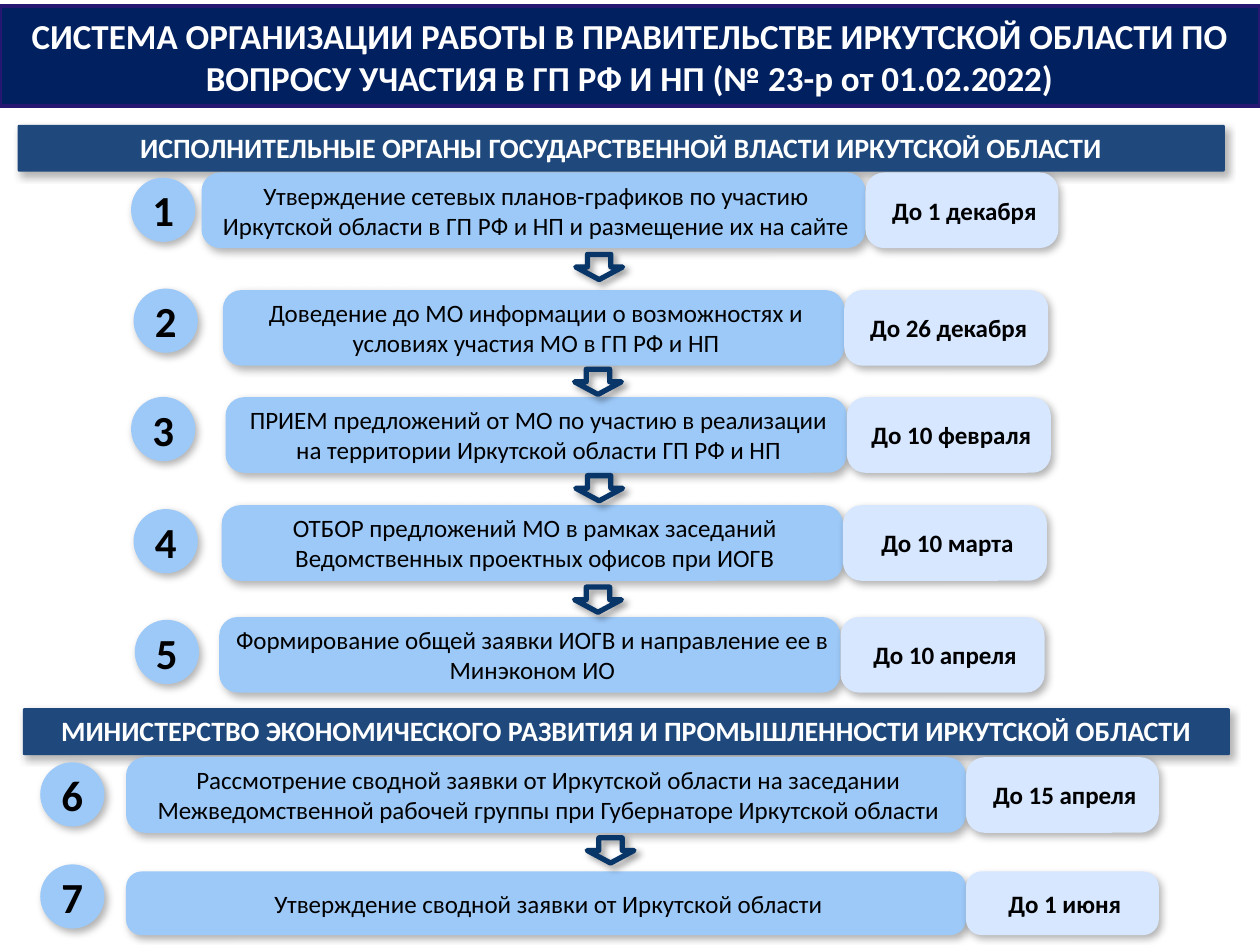
from pptx import Presentation
from pptx.dml.color import RGBColor
from pptx.enum.shapes import MSO_SHAPE as Preset
from pptx.enum.text import MSO_ANCHOR as Anchor, MSO_AUTO_SIZE as AutoSize, PP_ALIGN as Align
from pptx.oxml import parse_xml
from pptx.oxml.ns import nsdecls
from pptx.util import Pt

NAVY, BLUE, SKY, PALE = "002060", "1F497D", "9DC9F8", "D6E7FF"
WHITE, BLACK = "FFFFFF", "000000"


def write(box, text, size=14.3, bold=False, color=BLACK, anchor=Anchor.MIDDLE,
          margins=(0, 0, 0, 0)):
    frame = box.text_frame
    frame.word_wrap = True
    frame.auto_size = AutoSize.NONE
    frame.vertical_anchor = anchor
    frame.margin_left, frame.margin_top, frame.margin_right, frame.margin_bottom = map(Pt, margins)
    para = frame.paragraphs[0]
    para.alignment = Align.CENTER
    span = para.add_run()
    span.text = text
    span.font.name = "Calibri"
    span.font.size = Pt(size)
    span.font.bold = bold
    span.font.color.rgb = RGBColor.from_string(color)


def add_box(preset, left, top, width, height, fill=None, line=None, corner=None,
            blur=4.5, distance=2.6, angle=53, alpha=30):
    box = page.shapes.add_shape(preset, Pt(left), Pt(top), Pt(width), Pt(height))
    if corner is not None:
        box.adjustments[0] = corner
    if fill:
        box.fill.solid()
        box.fill.fore_color.rgb = RGBColor.from_string(fill)
    else:
        box.fill.background()
    if line:
        box.line.color.rgb = RGBColor.from_string(line)
        box.line.width = Pt(3)
    else:
        box.line.fill.background()
    # Soft outer shadow
    box._element.spPr.append(parse_xml(
        f'<a:effectLst {nsdecls("a")}><a:outerShdw blurRad="{Pt(blur)}" dist="{Pt(distance)}" '
        f'dir="{angle * 60000}" algn="tl" rotWithShape="0"><a:srgbClr val="000000">'
        f'<a:alpha val="{alpha * 1000}"/></a:srgbClr></a:outerShdw></a:effectLst>'))
    return box


deck = Presentation()
deck.slide_width, deck.slide_height = Pt(720), Pt(540)
page = deck.slides.add_slide(deck.slide_layouts[5])

# Title
title = page.shapes.title
title.left, title.top, title.width, title.height = Pt(0), Pt(3.6), Pt(720), Pt(56.9)
title.fill.solid()
title.fill.fore_color.rgb = RGBColor.from_string(NAVY)
title.line.color.rgb = RGBColor.from_string("261773")
title.line.width = Pt(2.47)
write(title, "СИСТЕМА ОРГАНИЗАЦИИ РАБОТЫ В ПРАВИТЕЛЬСТВЕ ИРКУТСКОЙ ОБЛАСТИ ПО "
      "ВОПРОСУ УЧАСТИЯ В ГП РФ И НП (№ 23-р от 01.02.2022)", size=20, bold=True, color=WHITE)

# Section bars
for left, top, text in [
    (10.1, 71.3, "ИСПОЛНИТЕЛЬНЫЕ ОРГАНЫ ГОСУДАРСТВЕННОЙ ВЛАСТИ ИРКУТСКОЙ ОБЛАСТИ"),
    (13, 404.7, "МИНИСТЕРСТВО ЭКОНОМИЧЕСКОГО РАЗВИТИЯ И ПРОМЫШЛЕННОСТИ ИРКУТСКОЙ ОБЛАСТИ"),
]:
    bar = add_box(Preset.ROUNDED_RECTANGLE, left, top, 689.8, 26.8, BLUE, corner=0.032)
    write(bar, text, size=16, bold=True, color=WHITE, anchor=Anchor.TOP, margins=(0, 2.9, 0, 2.9))

# Steps: circle left and top, step left, top, width and height, date width, texts
steps = [
    (74.9, 101.5, 115.2, 98.6, 379.4, 43.2, 110.2, "До 1 декабря",
     "Утверждение сетевых планов-графиков по участию Иркутской области в ГП РФ и НП "
     "и размещение их на сайте"),
    (76.3, 164.9, 127.4, 165.8, 355, 43.2, 116.6, "До 26 декабря",
     "Доведение до МО информации о возможностях и условиях участия МО в ГП РФ и НП"),
    (74.9, 226.8, 128.9, 227, 355, 43.2, 116.6, "До 10 февраля",
     "ПРИЕМ предложений от МО по участию в реализации на территории Иркутской области "
     "ГП РФ и НП"),
    (76.3, 290.9, 126.7, 288.7, 355, 43.2, 116.6, "До 10 марта",
     "ОТБОР предложений МО в рамках заседаний Ведомственных проектных офисов при ИОГВ"),
    (77, 354.2, 125.3, 352.6, 355, 43.2, 116.6, "До 10 апреля",
     "Формирование общей заявки ИОГВ и направление ее в Минэконом ИО"),
    (23, 435.6, 72, 432.7, 480, 43.2, 110.2, "До 15 апреля",
     "Рассмотрение сводной заявки от Иркутской области на заседании Межведомственной "
     "рабочей группы при Губернаторе Иркутской области"),
    (23, 493.9, 72, 498, 480, 36.4, 110.2, "До 1 июня",
     "Утверждение сводной заявки от Иркутской области"),
]
for number, (circle_left, circle_top, left, top, width, height, date_width,
             date, task) in enumerate(steps, 1):
    circle = add_box(Preset.OVAL, circle_left, circle_top, 36.7, 36.7, SKY)
    write(circle, str(number), size=24.5, bold=True)
    for box_left, box_width, fill, text, bold in [
        (left, width, SKY, task, False),
        (left + width, date_width, PALE, date, True),
    ]:
        box = add_box(Preset.ROUNDED_RECTANGLE, box_left, top, box_width, height, fill, corner=0.245)
        write(box, text, bold=bold, margins=(2.9, 2.9, 0, 2.9))

# Arrows between steps
for left, top in [(329, 145.4), (328.3, 211), (329, 271.8), (328.3, 335.5), (335.5, 478.8)]:
    add_box(Preset.DOWN_ARROW, left, top, 26.8, 14.4, line="083669",
            blur=4, distance=3, angle=45, alpha=40)

deck.save("out.pptx")
